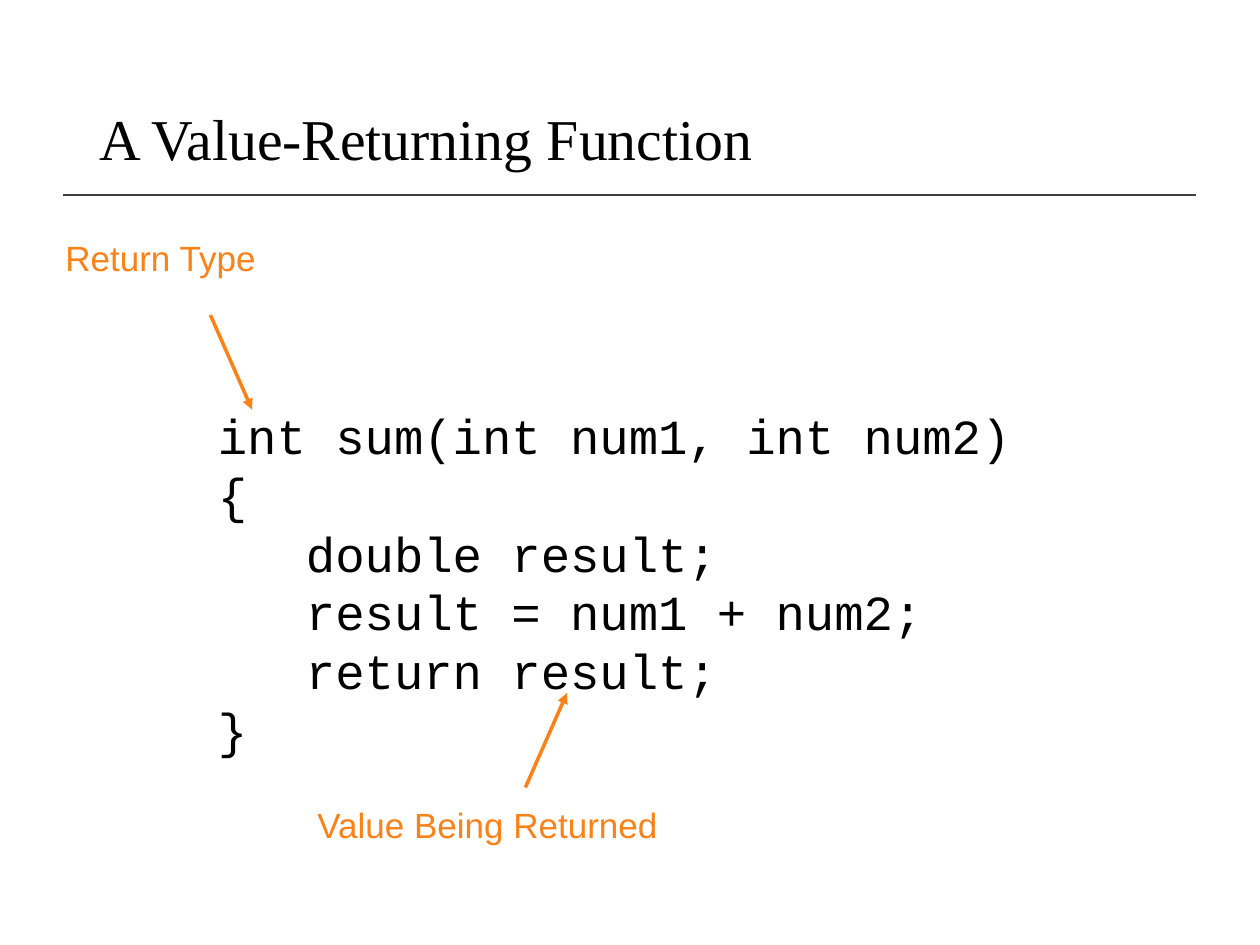
from lxml import etree
from pptx import Presentation
from pptx.dml.color import RGBColor
from pptx.enum import shapes, text
from pptx.oxml import ns
from pptx.util import Inches, Pt

BLACK = RGBColor(0x00, 0x00, 0x00)
GREY = RGBColor(0x40, 0x40, 0x40)
ORANGE = RGBColor(0xFA, 0x82, 0x18)

CODE = """int sum(int num1, int num2)
{
   double result;
   result = num1 + num2;
   return result;
}"""


def add_text(slide, box, wording, font, size, color, wrap=True):
    frame = slide.shapes.add_textbox(*map(Inches, box)).text_frame
    frame.word_wrap = wrap
    paragraph = frame.paragraphs[0]
    paragraph.text = wording
    for run in paragraph.runs:
        run.font.name = font
        run.font.size = Pt(size)
        run.font.color.rgb = color
    return frame


def add_line(slide, start, end, color, width, arrow=False):
    line = slide.shapes.add_connector(
        shapes.MSO_CONNECTOR.STRAIGHT, *map(Inches, start + end))
    line.line.color.rgb = color
    line.line.width = Pt(width)
    if arrow:
        etree.SubElement(line.line._get_or_add_ln(), ns.qn("a:tailEnd"), type="triangle")
    etree.SubElement(line._element.spPr, ns.qn("a:effectLst"))


def add_heading(slide, box):
    add_line(slide, (0.5, 1.55), (9.49, 1.55), GREY, 1)
    heading = add_text(slide, box, "A Value-Returning Function", "Times New Roman", 33, BLACK)
    heading.vertical_anchor = text.MSO_ANCHOR.MIDDLE
    heading.paragraphs[0].line_spacing = 0.9


def add_code(slide, box):
    code = add_text(slide, box, CODE, "Courier New", 28, BLACK)
    code.margin_left = Inches(0.48)
    code.paragraphs[0].line_spacing = Pt(33.6)


def add_callout(slide, box, wording, start, end, wrap=True):
    add_text(slide, box, wording, "Arial", 20, ORANGE, wrap)
    add_line(slide, start, end, ORANGE, 2, arrow=True)


def main():
    deck = Presentation()
    deck.slide_width, deck.slide_height = Inches(10), Inches(7.5)
    slide = deck.slides.add_slide(deck.slide_layouts[6])
    add_heading(slide, (0.69, 0.4, 8.62, 1.45))
    add_code(slide, (1.25, 3.17, 7.17, 2.9))
    add_callout(slide, (0.42, 1.83, 1.72, 0.44), "Return Type",
                (1.67, 2.5), (2, 3.25), wrap=False)
    add_callout(slide, (2.42, 6.33, 3.08, 0.44), "Value Being Returned",
                (4.17, 6.25), (4.5, 5.5))
    deck.save("out.pptx")


if __name__ == "__main__":
    main()
